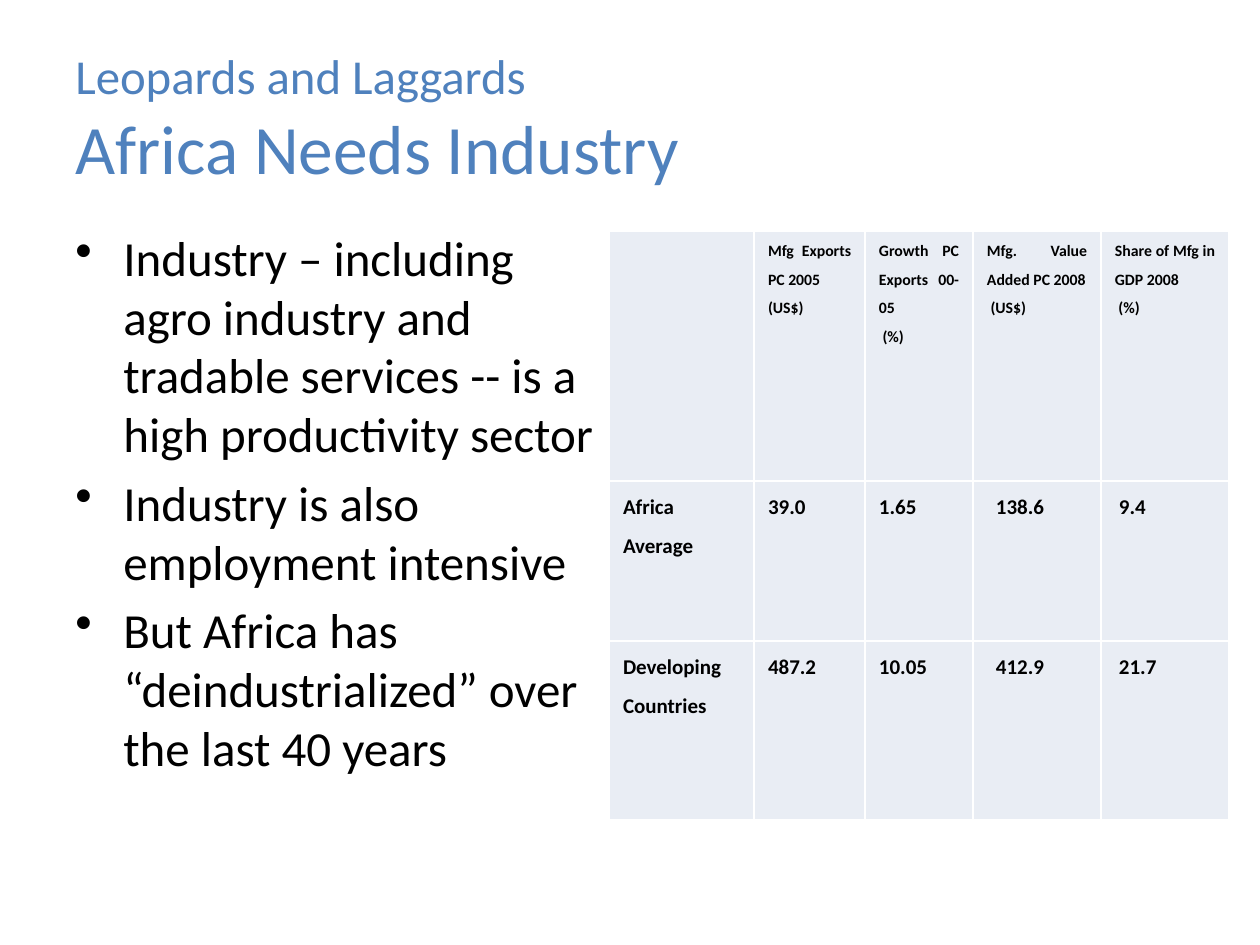
import pptx
import pptx.util
import pptx.dml.color
import pptx.enum.text
import pptx.oxml
import pptx.oxml.ns

PX = 914400 / 126
BLUE = pptx.dml.color.RGBColor(0x4F, 0x81, 0xBD)
BLACK = pptx.dml.color.RGBColor(0, 0, 0)
PALE = pptx.dml.color.RGBColor(0xE9, 0xED, 0xF4)
Pt = pptx.util.Pt


def px(*nums):
    return [pptx.util.Emu(round(n * PX)) for n in nums]


def style(font, size, color, bold=False):
    font.name = "Calibri"
    font.size = Pt(size)
    font.color.rgb = color
    font.bold = bold


deck = pptx.Presentation()
deck.slide_width, deck.slide_height = px(1260, 945)
slide = deck.slides.add_slide(deck.slide_layouts[6])

title = slide.shapes.add_textbox(*px(63, 38, 1134, 158)).text_frame
title.word_wrap = True
title.vertical_anchor = pptx.enum.text.MSO_ANCHOR.MIDDLE
head = title.paragraphs[0]
run = head.add_run()
run.text = "Leopards and Laggards"
style(run.font, 27.9, BLUE)
head.add_line_break()
run = head.add_run()
run.text = "Africa Needs Industry"
style(run.font, 39.6, BLUE)

points = [
    "Industry – including agro industry and tradable services -- is a high productivity sector",
    "Industry is also employment intensive",
    "But Africa has “deindustrialized” over the last 40 years",
]
body = slide.shapes.add_textbox(*px(63, 221, 557, 624)).text_frame
body.word_wrap = True
body.text = "\n".join(points)
hang = px(48)[0]
for para in body.paragraphs:
    style(para.font, 28, BLACK)
    para.space_before = Pt(5.6)
    props = para._p.get_or_add_pPr()
    props.set("marL", str(hang))
    props.set("indent", str(-hang))
    mark = pptx.oxml.parse_xml(
        f'<a:buChar {pptx.oxml.ns.nsdecls("a")} char="•"/>')
    props.find(pptx.oxml.ns.qn("a:defRPr")).addprevious(mark)

rows = [
    ["", "Mfg Exports PC 2005\n(US$)", "Growth PC Exports 00-05\n (%)",
     "Mfg. Value Added PC 2008\n (US$)", "Share of Mfg in GDP 2008\n (%)"],
    ["Africa Average", "39.0", "1.65", "138.6", "9.4"],
    ["Developing Countries", "487.2", "10.05", "412.9", "21.7"],
]
widths = [145, 111, 108, 128, 128]
heights = [250, 160, 179]
shifts = [0, 0, 0, 9, 4]
table = slide.shapes.add_table(
    len(rows), len(widths), *px(609, 231, sum(widths), sum(heights))).table
table.first_row = False
table.horz_banding = False
for col, width in zip(table.columns, px(*widths)):
    col.width = width
for r, (row, height) in enumerate(zip(rows, px(*heights))):
    table.rows[r].height = height
    for c, text in enumerate(row):
        cell = table.cell(r, c)
        cell.fill.solid()
        cell.fill.fore_color.rgb = PALE
        left = 14 + (shifts[c] if r else 0)
        cell.margin_left, cell.margin_top = px(left, 1)
        cell.margin_right, cell.margin_bottom = px(14, 0)
        cell.text = text
        for para in cell.text_frame.paragraphs:
            para.alignment = pptx.enum.text.PP_ALIGN.JUSTIFY
            para.line_spacing = 1.5
            style(para.font, 12 if r else 9, BLACK, True)

deck.save("out.pptx")
